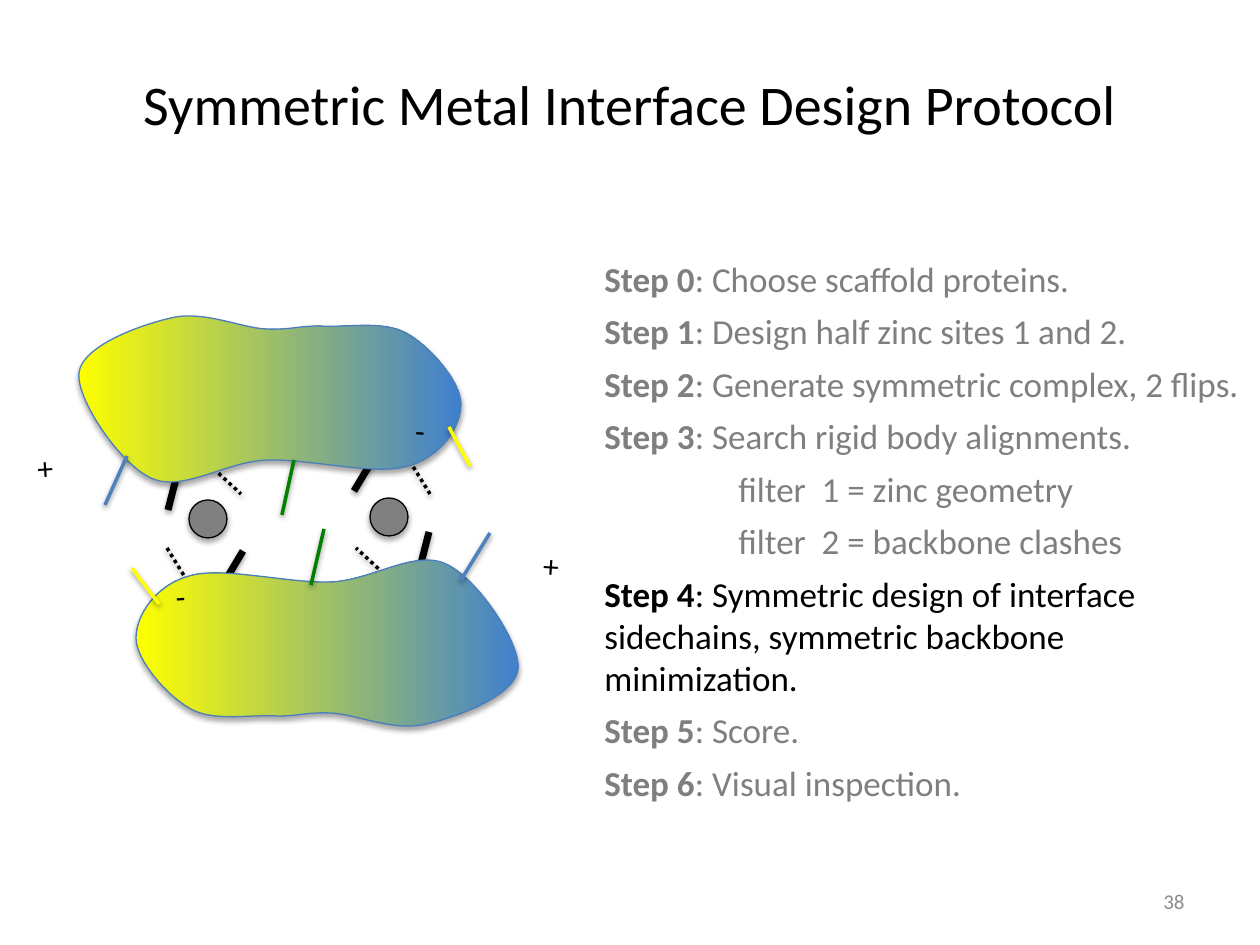
from lxml import etree
from pptx import Presentation
from pptx.dml.color import RGBColor
from pptx.enum.dml import MSO_LINE
from pptx.enum.shapes import MSO_CONNECTOR, MSO_SHAPE
from pptx.enum.text import MSO_ANCHOR, PP_ALIGN
from pptx.oxml.ns import qn
from pptx.util import Pt

PX = 914400 / 126
BLACK = RGBColor(0x00, 0x00, 0x00)
GRAY = RGBColor(0x7F, 0x7F, 0x7F)
LIGHT = RGBColor(0x8C, 0x8C, 0x8C)
METAL = RGBColor(0x80, 0x80, 0x80)
YELLOW = RGBColor(0xFF, 0xFF, 0x00)
BLUE = RGBColor(0x3F, 0x80, 0xCE)
EDGE = RGBColor(0x4B, 0x7E, 0xBC)
STEEL = RGBColor(0x4F, 0x81, 0xBD)
GREEN = RGBColor(0x00, 0x80, 0x00)
STRAIGHT = MSO_CONNECTOR.STRAIGHT
OVAL = MSO_SHAPE.OVAL
SYS_DOT, SOLID = MSO_LINE.ROUND_DOT, MSO_LINE.SOLID
TOP, MIDDLE = MSO_ANCHOR.TOP, MSO_ANCHOR.MIDDLE
LEFT, CENTER, RIGHT = PP_ALIGN.LEFT, PP_ALIGN.CENTER, PP_ALIGN.RIGHT


def add_shadow(sp, alpha, dist):
    spPr = sp._element.spPr
    effects = etree.SubElement(spPr, qn("a:effectLst"))
    shadow = etree.SubElement(effects, qn("a:outerShdw"), blurRad=str(Pt(3.1)),
                              dist=str(Pt(dist)), dir="5400000", rotWithShape="0")
    color = etree.SubElement(shadow, qn("a:srgbClr"), val="000000")
    etree.SubElement(color, qn("a:alpha"), val=str(alpha * 1000))


def add_line(points, color, width, dash=SOLID):
    sp = s.shapes.add_connector(STRAIGHT, *[int(v * PX) for v in points])
    sp.line.color.rgb = color
    for name, value in {"width": Pt(width), "dash_style": dash}.items():
        setattr(sp.line, name, value)
    add_shadow(sp, 38, 1.6)


prs = Presentation()
prs.slide_width, prs.slide_height = int(1260 * PX), int(945 * PX)
s = prs.slides.add_slide(prs.slide_layouts[6])

for x, y in [(189, 500), (370, 498)]:
    sp = s.shapes.add_shape(OVAL, *[int(v * PX) for v in (x, y, 38, 38)])
    sp.fill.solid()
    sp.fill.fore_color.rgb = METAL
    sp.line.color.rgb = BLACK
    sp.line.width = Pt(0.75)
    add_shadow(sp, 35, 1.8)

OUTLINE = [
    (320, 326),
    (344, 328), (383, 320), (406, 333), (430, 346), (461, 382), (461, 404),
    (461, 427), (441, 457), (408, 466), (377, 476), (311, 459), (268, 460),
    (226, 461), (183, 493), (151, 478), (120, 464), (76, 399), (79, 373),
    (82, 346), (140, 325), (171, 318), (203, 310), (241, 328), (266, 329),
    (291, 330), (297, 326), (320, 326),
]
SIDECHAINS = [
    ((203, 459, 241, 494), 2, SYS_DOT),
    ((406, 455, 430, 494), 2, SYS_DOT),
    ((378, 451, 354, 491), 4, SOLID),
    ((179, 467, 168, 510), 4, SOLID),
]
AXIS_X, AXIS_Y = 597, 1042

for lower in (True, False):
    for (x1, y1, x2, y2), width, dash in SIDECHAINS:
        if lower:
            x1, y1, x2, y2 = AXIS_X - x1, AXIS_Y - y1, AXIS_X - x2, AXIS_Y - y2
        add_line((x1, y1, x2, y2), BLACK, width, dash)
    builder = s.shapes.build_freeform(*OUTLINE[0], scale=PX)
    builder.add_line_segments(OUTLINE[1:], close=True)
    sp = builder.convert_to_shape()
    segments = list(sp._element.iter(qn("a:lnTo")))
    for i in range(0, len(segments), 3):
        curve = etree.Element(qn("a:cubicBezTo"))
        segments[i].addprevious(curve)
        for segment in segments[i:i + 3]:
            curve.append(segment[0])
            segment.getparent().remove(segment)
    sp.fill.gradient()
    sp.fill.gradient_angle = 0
    colors = (BLUE, YELLOW) if lower else (YELLOW, BLUE)
    for stop, position, color in zip(sp.fill.gradient_stops, (0, 1), colors):
        stop.color.rgb = color
        stop.position = position
    sp.line.color.rgb = EDGE
    sp.line.width = Pt(0.75)
    add_shadow(sp, 35, 1.8)
    if lower:
        sp.left = int(AXIS_X * PX) - sp.left - sp.width
        sp.top = int(AXIS_Y * PX) - sp.top - sp.height
        sp.rotation = 180

for points, color in [
    ((311, 585, 324, 529), GREEN), ((294, 460, 282, 515), GREEN),
    ((461, 580, 490, 533), STEEL), ((127, 456, 105, 505), STEEL),
    ((449, 427, 470, 466), YELLOW), ((159, 604, 132, 568), YELLOW),
]:
    add_line(points, color, 2)

STEPS = [
    ("Step 0", ": Choose scaffold proteins.", GRAY),
    ("Step 1", ": Design half zinc sites 1 and 2.", GRAY),
    ("Step 2", ": Generate symmetric complex, 2 flips.", GRAY),
    ("Step 3", ": Search rigid body alignments.", GRAY),
    ("", "filter  1 = zinc geometry", GRAY),
    ("", "filter  2 = backbone clashes", GRAY),
    ("Step 4", ": Symmetric design of interface sidechains, "
     "symmetric backbone minimization.", BLACK),
    ("Step 5", ": Score.", GRAY),
    ("Step 6", ": Visual inspection.", GRAY),
]
TITLE = [("", "Symmetric Metal Interface Design Protocol", BLACK)]
PLUS, MINUS = [("", "+", BLACK)], [("", "-", BLACK)]
TEXTS = [
    ((903, 876, 294, 50), 0, MIDDLE, RIGHT, 12, [("", "38", LIGHT)]),
    ((592, 251, 667, 564), 0, TOP, LEFT, 20, STEPS),
    ((0, 39, 1260, 129), 0, MIDDLE, CENTER, 32, TITLE),
    ((512, 545, 59, 50), 183.6, TOP, LEFT, 18, PLUS),
    ((403, 406, 59, 50), 3.6, TOP, LEFT, 18, MINUS),
    ((25, 442, 59, 50), 356.3, TOP, LEFT, 18, PLUS),
    ((139, 579, 59, 50), 176.3, TOP, LEFT, 18, MINUS),
]
for box, rotation, anchor, align, size, lines in TEXTS:
    sp = s.shapes.add_textbox(*[int(v * PX) for v in box])
    sp.rotation = rotation
    tf = sp.text_frame
    tf.word_wrap = True
    tf.vertical_anchor = anchor
    for i, (label, words, color) in enumerate(lines):
        p = tf.add_paragraph() if i else tf.paragraphs[0]
        p.alignment = align
        if lines is STEPS:
            p.space_after = Pt(6)
            if not label:
                p._p.get_or_add_pPr().set("marL", str(int(134 * PX)))
        for text, bold in ((label, True), (words, False)):
            if text:
                r = p.add_run()
                r.text = text
                r.font.color.rgb = color
                for name, value in {"name": "Calibri", "size": Pt(size), "bold": bold}.items():
                    setattr(r.font, name, value)

prs.save("out.pptx")
